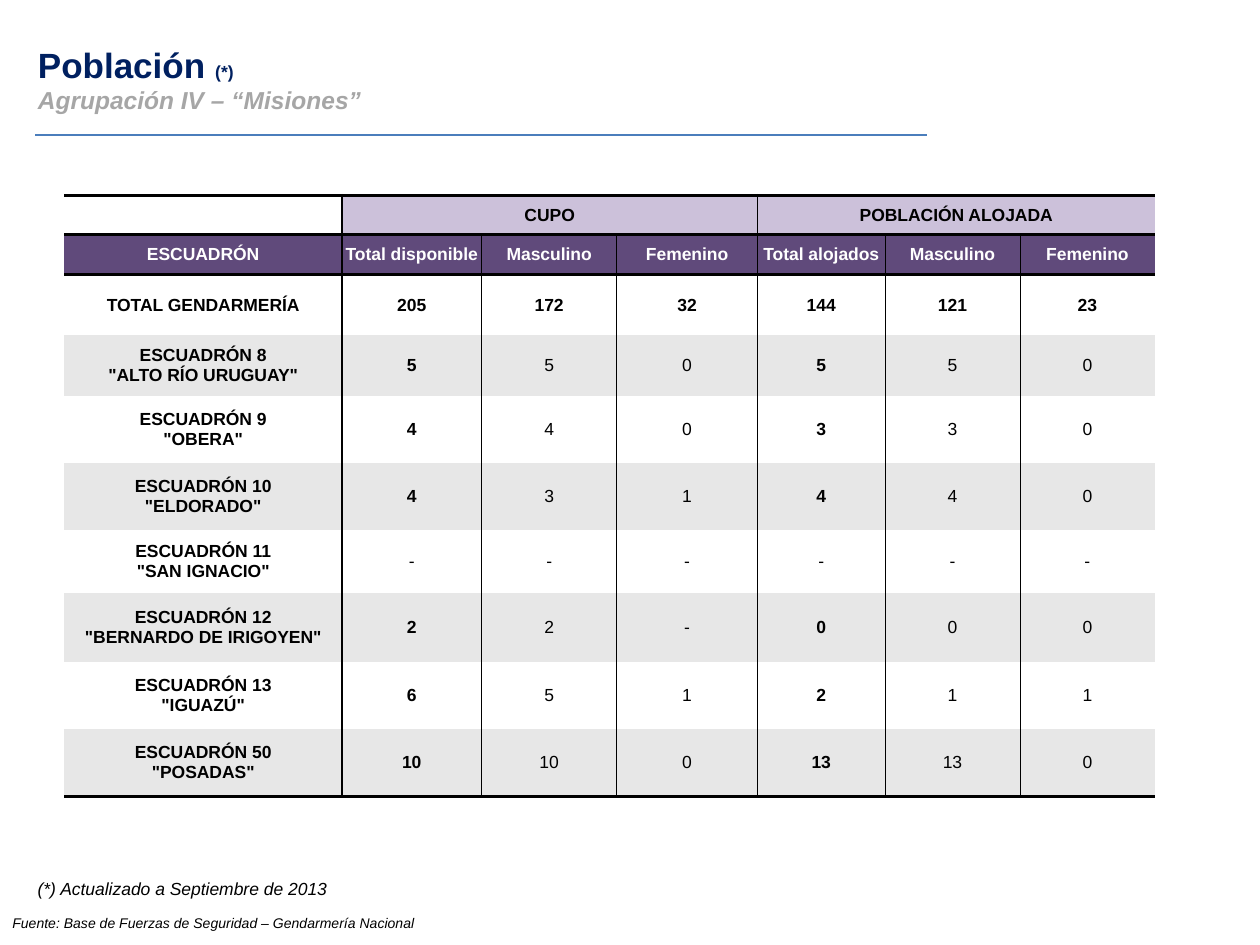
from dataclasses import dataclass

from lxml.etree import SubElement
from pptx import Presentation
from pptx.dml.color import RGBColor
from pptx.enum.shapes import MSO_CONNECTOR as Connector
from pptx.enum.text import MSO_ANCHOR as Anchor, MSO_AUTO_SIZE as AutoSize, PP_ALIGN as Align
from pptx.oxml.ns import qn
from pptx.util import Cm, Pt


@dataclass(frozen=True)
class Theme:
    font: str = "Arial"
    navy: str = "002060"
    gray: str = "A6A6A6"
    blue: str = "4B7EBC"
    black: str = "000000"
    white: str = "FFFFFF"
    lilac: str = "CCC1DA"
    purple: str = "604A7B"
    band: str = "E7E7E7"
    title_size: int = 20
    subtitle_size: int = 14
    body_size: int = 10
    source_size: int = 8
    heavy: float = 2
    medium: float = 1
    thin: float = 0.5
    rule: float = 0.75


THEME = Theme()
NO_STYLE = "{2D5ABB26-0587-4C30-8999-92F81FD0307C}"
COLUMN_WIDTHS = [5.59, 2.82, 2.72, 2.84, 2.57, 2.72, 2.72]
ROW_HEIGHTS = [0.79, 0.81, 1.22, 1.22, 1.35, 1.35, 1.27, 1.4, 1.35, 1.35]
TOTAL_COLUMNS = (1, 4)
GROUPS = {1: "CUPO", 4: "POBLACIÓN ALOJADA"}
HEADINGS = ["ESCUADRÓN", "Total disponible", "Masculino", "Femenino",
            "Total alojados", "Masculino", "Femenino"]
DATA = [
    ["TOTAL GENDARMERÍA", "205", "172", "32", "144", "121", "23"],
    ['ESCUADRÓN 8\n"ALTO RÍO URUGUAY"', "5", "5", "0", "5", "5", "0"],
    ['ESCUADRÓN 9\n"OBERA"', "4", "4", "0", "3", "3", "0"],
    ['ESCUADRÓN 10\n"ELDORADO"', "4", "3", "1", "4", "4", "0"],
    ['ESCUADRÓN 11\n"SAN IGNACIO"', "-", "-", "-", "-", "-", "-"],
    ['ESCUADRÓN 12\n"BERNARDO DE IRIGOYEN"', "2", "2", "-", "0", "0", "0"],
    ['ESCUADRÓN 13\n"IGUAZÚ"', "6", "5", "1", "2", "1", "1"],
    ['ESCUADRÓN 50\n"POSADAS"', "10", "10", "0", "13", "13", "0"],
]


def style_span(span, size, color, bold=False, italic=False):
    font = span.font
    font.name, font.size = THEME.font, Pt(size)
    font.bold, font.italic = bold, italic
    font.color.rgb = RGBColor.from_string(color)


def place(shape, left, top, width, height):
    shape.left, shape.top = Cm(left), Cm(top)
    shape.width, shape.height = Cm(width), Cm(height)


def add_heading(page, left, top, width, height):
    title = page.shapes.title
    place(title, left, top, width, height)
    frame = title.text_frame
    frame.text = "Población \nAgrupación IV – “Misiones”"
    frame.vertical_anchor = Anchor.TOP
    frame.auto_size = AutoSize.SHAPE_TO_FIT_TEXT
    first, second = frame.paragraphs
    first.add_run().text = "(*)"
    for para in frame.paragraphs:
        para.alignment = Align.LEFT
    style_span(first.runs[0], THEME.title_size, THEME.navy, bold=True)
    style_span(first.runs[1], THEME.body_size, THEME.navy, bold=True)
    style_span(second.runs[0], THEME.subtitle_size, THEME.gray, bold=True, italic=True)

    line_left, line_top = Cm(left + 0.2), Cm(top + 1.98)
    line = page.shapes.add_connector(
        Connector.STRAIGHT, line_left, line_top, line_left + Cm(17.98), line_top)
    line.line.color.rgb = RGBColor.from_string(THEME.blue)
    line.line.width = Pt(THEME.rule)
    SubElement(line._element.spPr, qn("a:effectLst"))


def add_note(page, text, size, left, top, width, height, wrap=True):
    box = page.shapes.add_textbox(Cm(left), Cm(top), Cm(width), Cm(height))
    frame = box.text_frame
    frame.word_wrap = wrap
    frame.auto_size = AutoSize.SHAPE_TO_FIT_TEXT
    frame.text = text
    style_span(frame.paragraphs[0].runs[0], size, THEME.black, italic=True)


def set_borders(cell, widths):
    properties = cell._tc.get_or_add_tcPr()
    for side in "LRTB":
        if side in widths:
            line = SubElement(properties, qn(f"a:ln{side}"), w=str(Pt(widths[side])))
            fill = SubElement(line, qn("a:solidFill"))
            SubElement(fill, qn("a:srgbClr"), val=THEME.black)


def border_widths(row, column):
    widths = {}
    if column in TOTAL_COLUMNS:
        widths["L"] = THEME.medium
    if column + 1 in TOTAL_COLUMNS:
        widths["R"] = THEME.medium
    if row > 0 and column in TOTAL_COLUMNS:
        widths["R"] = THEME.thin
    if row > 0 and column - 1 in TOTAL_COLUMNS:
        widths["L"] = THEME.thin
    if row in (0, 1):
        widths["T"] = THEME.heavy
    if row in (0, len(ROW_HEIGHTS) - 1):
        widths["B"] = THEME.heavy
    return widths


def fill_color(row, column):
    if row == 0:
        return THEME.lilac if column else THEME.white
    if row == 1:
        return THEME.purple
    return THEME.band if row % 2 else THEME.white


def style_cell(cell, row, column, text):
    set_borders(cell, border_widths(row, column))
    cell.fill.solid()
    cell.fill.fore_color.rgb = RGBColor.from_string(fill_color(row, column))
    cell.vertical_anchor = Anchor.MIDDLE
    cell.margin_left = cell.margin_right = cell.margin_top = cell.margin_bottom = 0
    cell.text = text
    bold = row < 3 or column == 0 or (column in TOTAL_COLUMNS and text != "-")
    color = THEME.white if row == 1 else THEME.black
    for para in cell.text_frame.paragraphs:
        para.alignment = Align.CENTER
        for span in para.runs:
            style_span(span, THEME.body_size, color, bold)


def add_population_table(page, left, top):
    group_row = [GROUPS.get(column, "") for column in range(len(HEADINGS))]
    rows = [group_row, HEADINGS, *DATA]
    table = page.shapes.add_table(
        len(rows), len(HEADINGS), Cm(left), Cm(top),
        Cm(sum(COLUMN_WIDTHS)), Cm(sum(ROW_HEIGHTS))).table
    table.first_row = table.horz_banding = False
    table._tbl.tblPr.find(qn("a:tableStyleId")).text = NO_STYLE
    for column, width in zip(table.columns, COLUMN_WIDTHS):
        column.width = Cm(width)
    for row, height in zip(table.rows, ROW_HEIGHTS):
        row.height = Cm(height)
    for row, texts in enumerate(rows):
        for column, text in enumerate(texts):
            style_cell(table.cell(row, column), row, column, text)
    for column in GROUPS:
        table.cell(0, column).merge(table.cell(0, column + 2))


def main():
    deck = Presentation()
    deck.slide_width, deck.slide_height = Cm(25.4), Cm(19.05)
    page = deck.slides.add_slide(deck.slide_layouts[5])
    add_heading(page, 0.51, 0.74, 16.61, 1.7)
    add_note(page, "Fuente: Base de Fuerzas de Seguridad – Gendarmería Nacional",
             THEME.source_size, 0, 18.31, 21.21, 0.61)
    add_population_table(page, 1.3, 3.94)
    add_note(page, "(*) Actualizado a Septiembre de 2013",
             THEME.body_size, 0.51, 17.58, 6.4, 0.69, wrap=False)
    deck.save("out.pptx")


if __name__ == "__main__":
    main()
